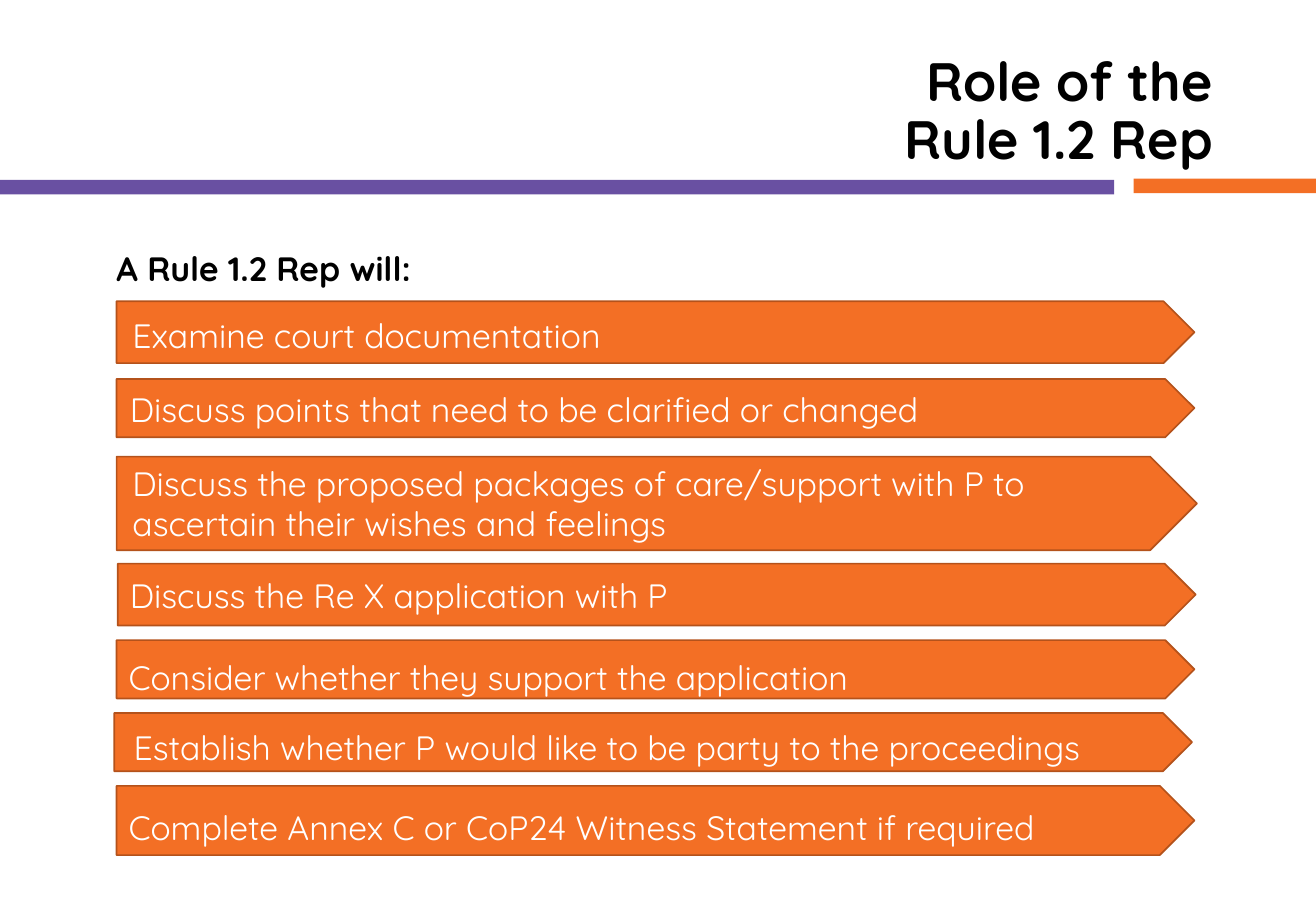
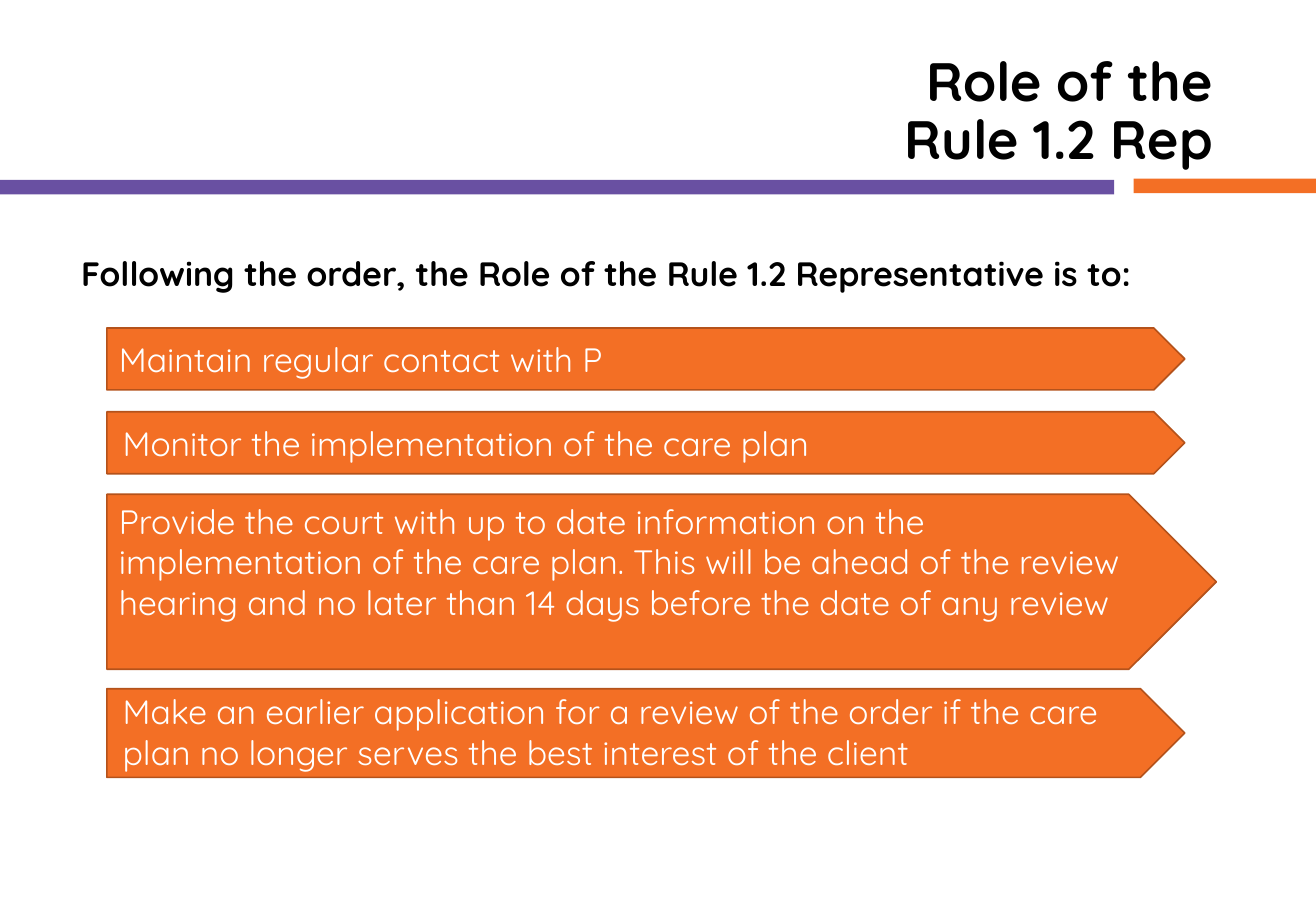
from dataclasses import dataclass

from pptx import Presentation
from pptx.dml.color import RGBColor
from pptx.enum.shapes import MSO_SHAPE as Shape
from pptx.enum.text import MSO_ANCHOR as Anchor, PP_ALIGN as Align
from pptx.util import Inches, Pt

PURPLE = RGBColor(0x69, 0x50, 0xA2)
ORANGE = RGBColor(0xF3, 0x6F, 0x25)
RUST = RGBColor(0xB4, 0x52, 0x1B)
BLACK = RGBColor(0, 0, 0)
WHITE = RGBColor(255, 255, 255)
FONT = "Quicksand"
TITLE = "Role of the\vRule 1.2 Rep"


@dataclass
class Duty:
    """One arrow; indent and drop place its text from the left and top edges."""
    text: str
    left: float
    top: float
    height: float
    indent: float = 0.1
    drop: float = 0.09
    width: float = 8.87


COURT_DUTIES = [
    Duty("Examine court documentation", 0.96, 2.48, 0.51, 0.13, 0.11),
    Duty("Discuss points that need to be clarified or changed",
         0.96, 3.12, 0.48, 0.11, 0.08),
    Duty("Discuss the proposed packages of care/support with P to "
         "ascertain their wishes and feelings",
         0.96, 3.76, 0.77, 0.13, 0.05, width=8.89),
    Duty("Discuss the Re X application with P", 0.97, 4.64, 0.51),
    Duty("Consider whether they support the application",
         0.96, 5.27, 0.48, drop=0.14),
    Duty("Establish whether P would like to be party to the proceedings",
         0.94, 5.87, 0.48, 0.16, 0.11),
    Duty("Complete Annex C or CoP24 Witness Statement if required",
         0.96, 6.47, 0.57, drop=0.17),
]
FOLLOW_UP_DUTIES = [
    Duty("Maintain regular contact with P", 0.88, 2.7, 0.51),
    Duty("Monitor the implementation of the care plan", 0.88, 3.39, 0.51, 0.13),
    Duty("Provide the court with up to date information on the "
         "implementation of the care plan. This will be ahead of the review "
         "hearing and no later than 14 days before the date of any review",
         0.88, 4.07, 1.44, drop=0.05, width=9.13),
    Duty("Make an earlier application for a review of the order if the care "
         "plan no longer serves the best interest of the client",
         0.88, 5.67, 0.73, 0.13, 0.02),
]


def style_text(frame, text, color, size=20, bold=False, align=Align.LEFT):
    frame.word_wrap = True
    frame.vertical_anchor = Anchor.TOP
    paragraph = frame.paragraphs[0]
    paragraph.text = text
    paragraph.alignment = align
    font = paragraph.font
    font.name, font.size, font.bold = FONT, Pt(size), bold
    font.color.rgb = color
    return paragraph


def add_label(slide, text, left, top, width, height, **style):
    box = slide.shapes.add_textbox(*map(Inches, (left, top, width, height)))
    return style_text(box.text_frame, text, BLACK, bold=True, **style)


def add_filled(slide, preset, fill, left, top, width, height):
    shape = slide.shapes.add_shape(
        preset, *map(Inches, (left, top, width, height)))
    shape.shadow.inherit = False
    shape.fill.solid()
    shape.fill.fore_color.rgb = fill
    shape.line.fill.background()
    return shape


def add_duty(slide, duty):
    arrow = add_filled(slide, Shape.PENTAGON, ORANGE,
                       duty.left, duty.top, duty.width, duty.height)
    arrow.line.color.rgb = RUST
    arrow.line.width = Pt(1)
    frame = arrow.text_frame
    frame.margin_left = Inches(duty.indent)
    frame.margin_top = Inches(duty.drop)
    frame.margin_bottom = 0
    style_text(frame, duty.text, WHITE)


def add_role_slide(deck, heading, heading_left, heading_top, duties):
    slide = deck.slides.add_slide(deck.slide_layouts[6])
    add_filled(slide, Shape.RECTANGLE, PURPLE, 0, 1.48, 9.17, 0.12)
    add_filled(slide, Shape.RECTANGLE, ORANGE, 9.33, 1.47, 1.5, 0.12)
    title = add_label(slide, TITLE, 0.74, 0.4, 9.34, 1.45,
                      size=32, align=Align.RIGHT)
    title.line_spacing = 0.9
    add_label(slide, heading, heading_left, heading_top, 9.19, 0.44)
    for duty in duties:
        add_duty(slide, duty)


def main():
    deck = Presentation()
    deck.slide_width, deck.slide_height = Inches(10.83), Inches(7.5)
    add_role_slide(deck, "A Rule 1.2 Rep will:", 0.86, 1.99, COURT_DUTIES)
    add_role_slide(
        deck, "Following the order, the Role of the Rule 1.2 Representative is to:",
        0.57, 2.03, FOLLOW_UP_DUTIES)
    deck.save("out.pptx")


if __name__ == "__main__":
    main()
